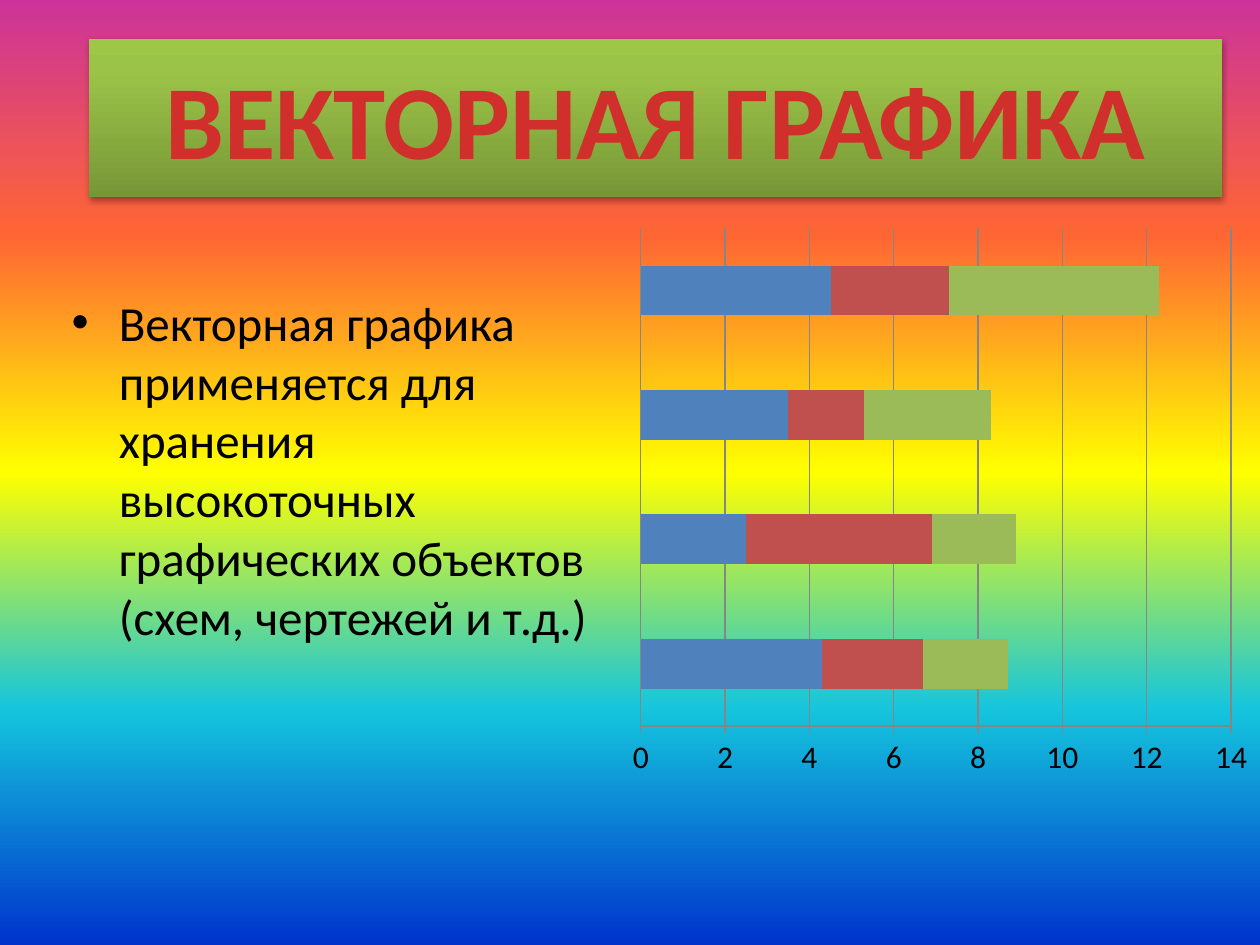
"""Builds a slide on vector graphics with a stacked bar chart."""
from lxml import etree
from pptx import Presentation, util as u
from pptx.chart.data import CategoryChartData
from pptx.dml.color import RGBColor
from pptx.enum import chart as ch, text
from pptx.oxml import parse_xml
from pptx.oxml.ns import nsdecls, qn

TITLE = "ВЕКТОРНАЯ ГРАФИКА"
BODY = ["Векторная графика применяется для хранения высокоточных "
        "графических объектов (схем, чертежей и т.д.)"]
CATEGORIES = ["1", "2", "3", "4"]
SERIES = [
    ("Series 1", (4.3, 2.5, 3.5, 4.5), "blue"),
    ("Series 2", (2.4, 4.4, 1.8, 2.8), "red"),
    ("Series 3", (2, 2, 3, 5), "green"),
]
COLORS = {"blue": "4F81BD", "red": "C0504D", "green": "9BBB59",
          "title": "D02F2C", "text": "000000", "grid": "868686"}
RAINBOW = [(0, "CC3399"), (25, "FF6633"), (50, "FFFF00"),
           (75, "15C5DD"), (100, "0033CC")]
BANNER = [(0, "779737"), (80, "9BC348"), (100, "9DC746")]
BOXES = {"title": (89, 39, 1133, 158), "body": (59, 286, 577, 508),
         "chart": (620, 217, 640, 571)}
FONT = "Calibri"
EMU_PER_PX = 914400 / 126


def px(n):
    return u.Emu(round(n * EMU_PER_PX))


def rgb(name):
    return RGBColor.from_string(COLORS[name])


def place(sp, name):
    sp.left, sp.top, sp.width, sp.height = map(px, BOXES[name])


def gradient(owner, fill, stops, angle):
    fill.gradient()
    fill.gradient_angle = angle
    gs_list = next(owner.element.iter(qn("a:gsLst")))
    for old in list(gs_list):
        gs_list.remove(old)
    for pos, color in stops:
        gs = etree.SubElement(gs_list, qn("a:gs"), pos=str(pos * 1000))
        etree.SubElement(gs, qn("a:srgbClr"), val=color)


def style(font, size, color, bold=False):
    font.name, font.size, font.bold = FONT, u.Pt(size), bold
    font.color.rgb = rgb(color)


def add_title(s):
    sp = s.shapes.title
    place(sp, "title")
    gradient(sp, sp.fill, BANNER, 90)
    sp.element.spPr.append(parse_xml(
        f'<a:effectLst {nsdecls("a")}><a:outerShdw blurRad="39370" dist="22860" '
        'dir="5400000" rotWithShape="0"><a:srgbClr val="000000">'
        '<a:alpha val="35000"/></a:srgbClr></a:outerShdw></a:effectLst>'))
    tf = sp.text_frame
    tf.auto_size = text.MSO_AUTO_SIZE.NONE
    tf.vertical_anchor = text.MSO_ANCHOR.MIDDLE
    p = tf.paragraphs[0]
    p.alignment = text.PP_ALIGN.CENTER
    r = p.add_run()
    r.text = TITLE
    style(r.font, 60, "title", True)


def add_body(s):
    sp = s.placeholders[1]
    place(sp, "body")
    tf = sp.text_frame
    tf.auto_size = text.MSO_AUTO_SIZE.NONE
    for i, line in enumerate(BODY):
        p = tf.add_paragraph() if i else tf.paragraphs[0]
        r = p.add_run()
        r.text = line
        style(r.font, 28, "text")


def add_chart(s):
    data = CategoryChartData()
    data.categories = CATEGORIES
    for name, values, _ in SERIES:
        data.add_series(name, values)
    chart = s.shapes.add_chart(ch.XL_CHART_TYPE.BAR_STACKED,
                               *map(px, BOXES["chart"]), data).chart
    chart.has_title = chart.has_legend = False
    style(chart.font, 18, "text")
    plot = chart.plots[0]
    plot.vary_by_categories = False
    plot.overlap, plot.gap_width = 100, 150
    for series, (_, _, color) in zip(plot.series, SERIES):
        series.format.fill.solid()
        series.format.fill.fore_color.rgb = rgb(color)
    chart.category_axis.visible = False
    axis = chart.value_axis
    axis.minimum_scale, axis.maximum_scale, axis.major_unit = 0, 14, 2
    axis.major_tick_mark = ch.XL_TICK_MARK.CROSS
    axis.minor_tick_mark = ch.XL_TICK_MARK.NONE
    axis.has_major_gridlines = True
    for line in (axis.format.line, axis.major_gridlines.format.line):
        line.color.rgb = rgb("grid")
        line.width = u.Pt(0.75)


def main():
    prs = Presentation()
    prs.slide_width, prs.slide_height = px(1260), px(945)
    s = prs.slides.add_slide(prs.slide_layouts[1])
    gradient(s, s.background.fill, RAINBOW, 270)
    add_title(s)
    add_body(s)
    add_chart(s)
    prs.save("out.pptx")


if __name__ == "__main__":
    main()
